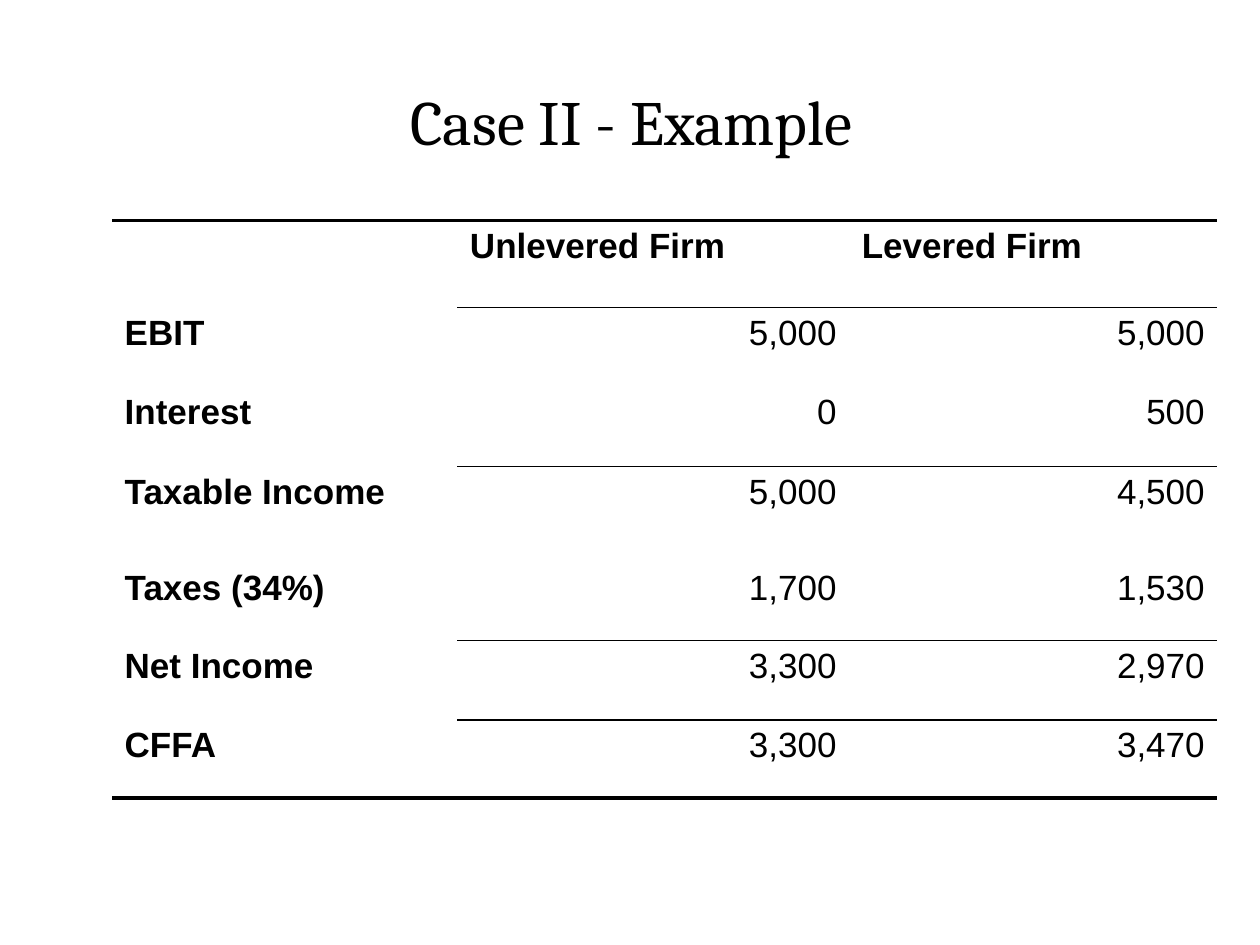
from lxml.etree import SubElement
from pptx import Presentation
from pptx.dml.color import RGBColor
from pptx.enum.text import MSO_ANCHOR, PP_ALIGN
from pptx.oxml.ns import qn
from pptx.util import Cm, Pt

# Content
TITLE = "Case II - Example"
ROWS = [
    ("", "Unlevered Firm", "Levered Firm"),
    ("EBIT", "5,000", "5,000"),
    ("Interest", "0", "500"),
    ("Taxable Income", "5,000", "4,500"),
    ("Taxes (34%)", "1,700", "1,530"),
    ("Net Income", "3,300", "2,970"),
    ("CFFA", "3,300", "3,470"),
]
COLUMN_WIDTHS = [6.96, 7.9, 7.42]
ROW_HEIGHTS = [1.75, 1.6, 1.6, 1.93, 1.58, 1.6, 1.58]

# Rules: line number counted from the table's top -> width in points
OUTER_RULES = {0: 2.25, len(ROWS): 2.25}
FIGURE_RULES = OUTER_RULES | {1: 1, 3: 1, 5: 1, 6: 1}

BLACK = RGBColor(0, 0, 0)
WHITE = RGBColor(255, 255, 255)


def write_text(frame, text, font="Arial", size=20, bold=False, align=PP_ALIGN.LEFT):
    para = frame.paragraphs[0]
    para.alignment = align
    span = para.add_run()
    span.text = text
    span.font.name = font
    span.font.size = Pt(size)
    span.font.bold = bold
    span.font.color.rgb = BLACK


def set_border(cell, side, width):
    properties = cell._tc.get_or_add_tcPr()
    line = SubElement(properties, qn(f"a:ln{side}"), w=str(Pt(width or 0)))
    if width:
        fill = SubElement(line, qn("a:solidFill"))
        SubElement(fill, qn("a:srgbClr"), val=str(BLACK))
    else:
        SubElement(line, qn("a:noFill"))


# Slide and title
deck = Presentation()
deck.slide_width, deck.slide_height = Cm(25.4), Cm(19.05)
page = deck.slides.add_slide(deck.slide_layouts[5])
title = page.shapes.title
title.left, title.top, title.width, title.height = Cm(1.07), Cm(0.84), Cm(23.32), Cm(3.18)
title.text_frame.vertical_anchor = MSO_ANCHOR.MIDDLE
write_text(title.text_frame, TITLE, font="Cambria", size=36, align=PP_ALIGN.CENTER)

# Table grid
table = page.shapes.add_table(
    len(ROWS), len(COLUMN_WIDTHS), Cm(2.26), Cm(4.45),
    Cm(sum(COLUMN_WIDTHS)), Cm(sum(ROW_HEIGHTS)),
).table
table.first_row = table.horz_banding = False
for column, width in zip(table.columns, COLUMN_WIDTHS):
    column.width = Cm(width)
for row, height in zip(table.rows, ROW_HEIGHTS):
    row.height = Cm(height)

# Cells: bold headings and labels, right-aligned figures
for row_number, texts in enumerate(ROWS):
    for column_number, text in enumerate(texts):
        cell = table.cell(row_number, column_number)
        is_figure = row_number > 0 and column_number > 0
        if text:
            write_text(cell.text_frame, text, bold=not is_figure,
                       align=PP_ALIGN.RIGHT if is_figure else PP_ALIGN.LEFT)
        rules = FIGURE_RULES if column_number else OUTER_RULES
        widths = {"L": None, "R": None,
                  "T": rules.get(row_number), "B": rules.get(row_number + 1)}
        for side, width in widths.items():
            set_border(cell, side, width)
        cell.fill.solid()
        cell.fill.fore_color.rgb = WHITE

deck.save("out.pptx")
